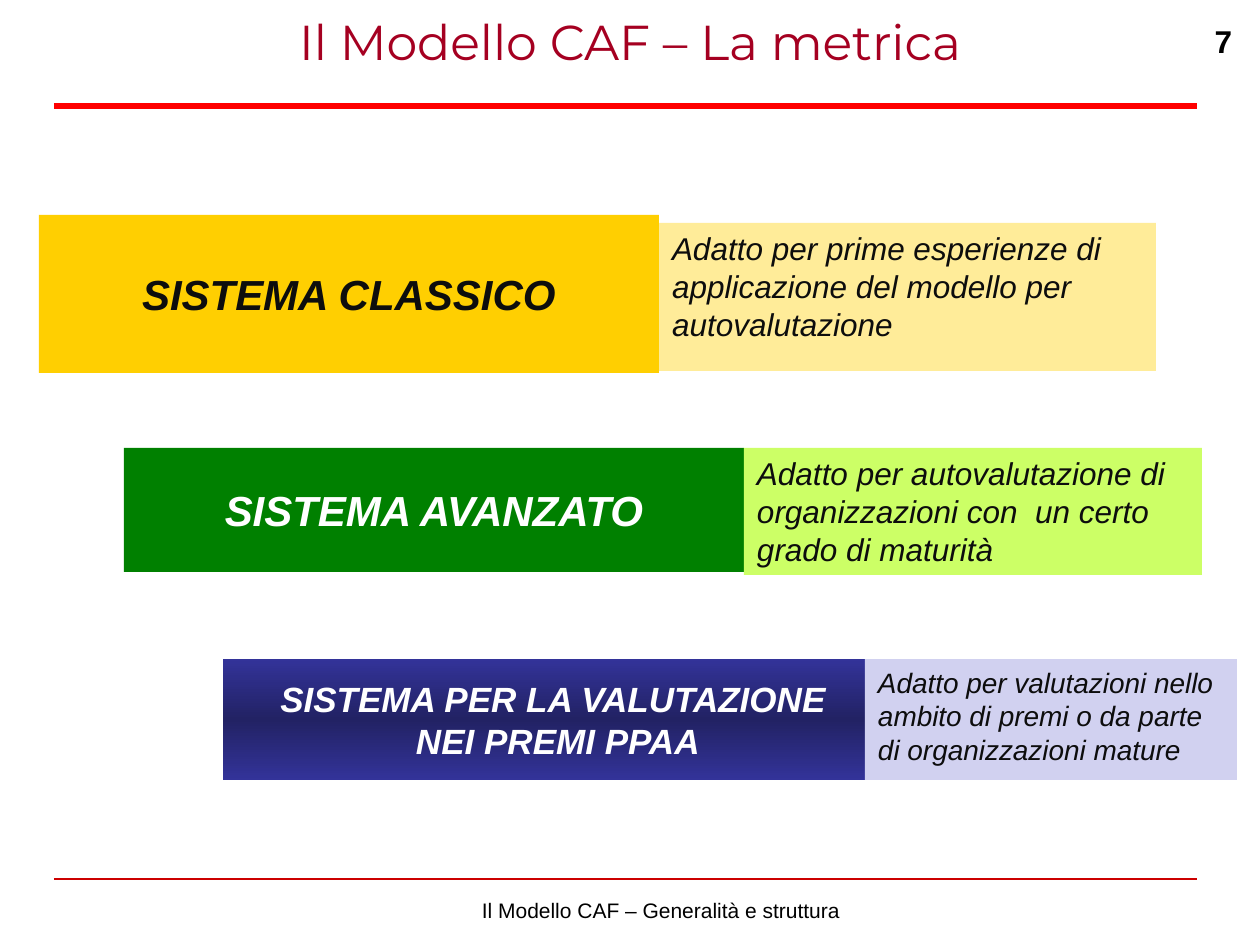
from dataclasses import dataclass
import copy

import pptx
import pptx.dml.color
import pptx.enum.shapes
import pptx.enum.text
import pptx.oxml.ns
import pptx.util

EMU_PER_PX = 914400 / 126
ALIGN = pptx.enum.text.PP_ALIGN
ANCHOR = pptx.enum.text.MSO_ANCHOR


@dataclass(frozen=True)
class Theme:
    body_font: str = "Arial"
    title_font: str = "Montserrat"
    title_size: int = 28
    system_size: int = 24
    long_system_size: int = 20
    note_size: int = 18
    small_note_size: int = 16
    footer_size: int = 12
    white: str = "FFFFFF"
    black: str = "000000"
    ink: str = "0D0D0D"
    title: str = "A50021"
    top_rule: str = "FF0000"
    bottom_rule: str = "CC0000"
    yellow: str = "FFCF01"
    pale_yellow: str = "FFEC99"
    green: str = "008000"
    pale_green: str = "CCFF66"
    blue: str = "333399"
    dark_blue: str = "222264"
    pale_blue: str = "D1D1F0"


THEME = Theme()


@dataclass(frozen=True)
class Box:
    """A text panel, in px; fill holds one colour, or edge and middle colours."""
    left: int
    top: int
    width: int
    height: int
    text: str
    size: int
    color: str
    fill: tuple[str, ...] = ()
    font: str = THEME.body_font
    bold: bool = False
    italic: bool = False
    align: ALIGN = ALIGN.LEFT
    anchor: ANCHOR = ANCHOR.TOP
    inset: tuple[int, int] = (13, 6)


@dataclass(frozen=True)
class Rule:
    y: int
    color: str
    weight: float


def system_box(left: int, top: int, width: int, height: int, text: str,
               size: int, color: str, *fill: str) -> Box:
    return Box(left, top, width, height, text, size, color, fill, bold=True,
               italic=True, align=ALIGN.CENTER, anchor=ANCHOR.MIDDLE, inset=(11, 5))


def note_box(left: int, top: int, width: int, height: int, text: str,
             size: int, fill: str) -> Box:
    return Box(left, top, width, height, text, size, THEME.ink, (fill,), italic=True)


RULE_LEFT, RULE_RIGHT = 54, 1197
RULES = [Rule(106, THEME.top_rule, 3.5), Rule(879, THEME.bottom_rule, 1.5)]

BOXES = [
    Box(375, 891, 572, 38, "Il Modello CAF – Generalità e struttura",
        THEME.footer_size, THEME.black, (THEME.white,),
        align=ALIGN.CENTER, anchor=ANCHOR.MIDDLE),
    Box(1176, 16, 69, 63, "7", THEME.note_size, THEME.black,
        bold=True, align=ALIGN.RIGHT),
    Box(0, 6, 1260, 64, "Il Modello CAF – La metrica", THEME.title_size,
        THEME.title, font=THEME.title_font, align=ALIGN.CENTER),
    system_box(39, 215, 620, 158, "SISTEMA CLASSICO",
               THEME.system_size, THEME.ink, THEME.yellow),
    note_box(659, 223, 497, 148,
             "Adatto per prime esperienze di applicazione del modello per autovalutazione",
             THEME.note_size, THEME.pale_yellow),
    system_box(124, 448, 620, 124, "SISTEMA AVANZATO",
               THEME.system_size, THEME.white, THEME.green),
    note_box(744, 448, 458, 127,
             "Adatto per autovalutazione di\n"
             "organizzazioni con  un certo grado di maturità",
             THEME.note_size, THEME.pale_green),
    system_box(223, 659, 670, 121, "SISTEMA PER LA VALUTAZIONE \nNEI PREMI PPAA",
               THEME.long_system_size, THEME.white, THEME.blue, THEME.dark_blue),
    note_box(865, 659, 372, 121,
             "Adatto per valutazioni nello\n"
             "ambito di premi o da parte di organizzazioni mature",
             THEME.small_note_size, THEME.pale_blue),
]


def px(n: int) -> int:
    return pptx.util.Emu(round(n * EMU_PER_PX))


def rgb(color: str) -> pptx.dml.color.RGBColor:
    return pptx.dml.color.RGBColor.from_string(color)


def fill_mirrored(fill, edge: str, middle: str) -> None:
    """Vertical gradient running edge, middle, edge."""
    fill.gradient()
    fill.gradient_angle = 270
    first, last = fill.gradient_stops
    first.position, last.position = 0, 0.5
    first.color.rgb, last.color.rgb = rgb(edge), rgb(middle)
    stops = fill._xPr.find(".//" + pptx.oxml.ns.qn("a:gsLst"))
    end = copy.deepcopy(stops[0])
    end.set("pos", "100000")
    stops.append(end)


def draw_box(s, box: Box) -> None:
    place = [px(n) for n in (box.left, box.top, box.width, box.height)]
    if box.fill:
        sp = s.shapes.add_shape(pptx.enum.shapes.MSO_SHAPE.RECTANGLE, *place)
        sp.shadow.inherit = False
        sp.line.fill.background()
        if len(box.fill) == 2:
            fill_mirrored(sp.fill, *box.fill)
        else:
            sp.fill.solid()
            sp.fill.fore_color.rgb = rgb(box.fill[0])
    else:
        sp = s.shapes.add_textbox(*place)
    tf = sp.text_frame
    tf.word_wrap = True
    tf.vertical_anchor = box.anchor
    tf.margin_left = tf.margin_right = px(box.inset[0])
    tf.margin_top = tf.margin_bottom = px(box.inset[1])
    tf.text = box.text
    for p in tf.paragraphs:
        p.alignment = box.align
        for r in p.runs:
            r.font.name = box.font
            r.font.size = pptx.util.Pt(box.size)
            r.font.bold = box.bold
            r.font.italic = box.italic
            r.font.color.rgb = rgb(box.color)


def draw_rule(s, rule: Rule) -> None:
    line = s.shapes.add_connector(pptx.enum.shapes.MSO_CONNECTOR.STRAIGHT,
                                  px(RULE_LEFT), px(rule.y), px(RULE_RIGHT), px(rule.y))
    line.line.color.rgb = rgb(rule.color)
    line.line.width = pptx.util.Pt(rule.weight)
    line._element.spPr.append(pptx.oxml.parse_xml(
        f"<a:effectLst {pptx.oxml.ns.nsdecls('a')}/>"))


def main() -> None:
    prs = pptx.Presentation()
    prs.slide_width, prs.slide_height = px(1260), px(945)
    s = prs.slides.add_slide(prs.slide_layouts[6])
    for rule in RULES:
        draw_rule(s, rule)
    for box in BOXES:
        draw_box(s, box)
    prs.save("out.pptx")


if __name__ == "__main__":
    main()
